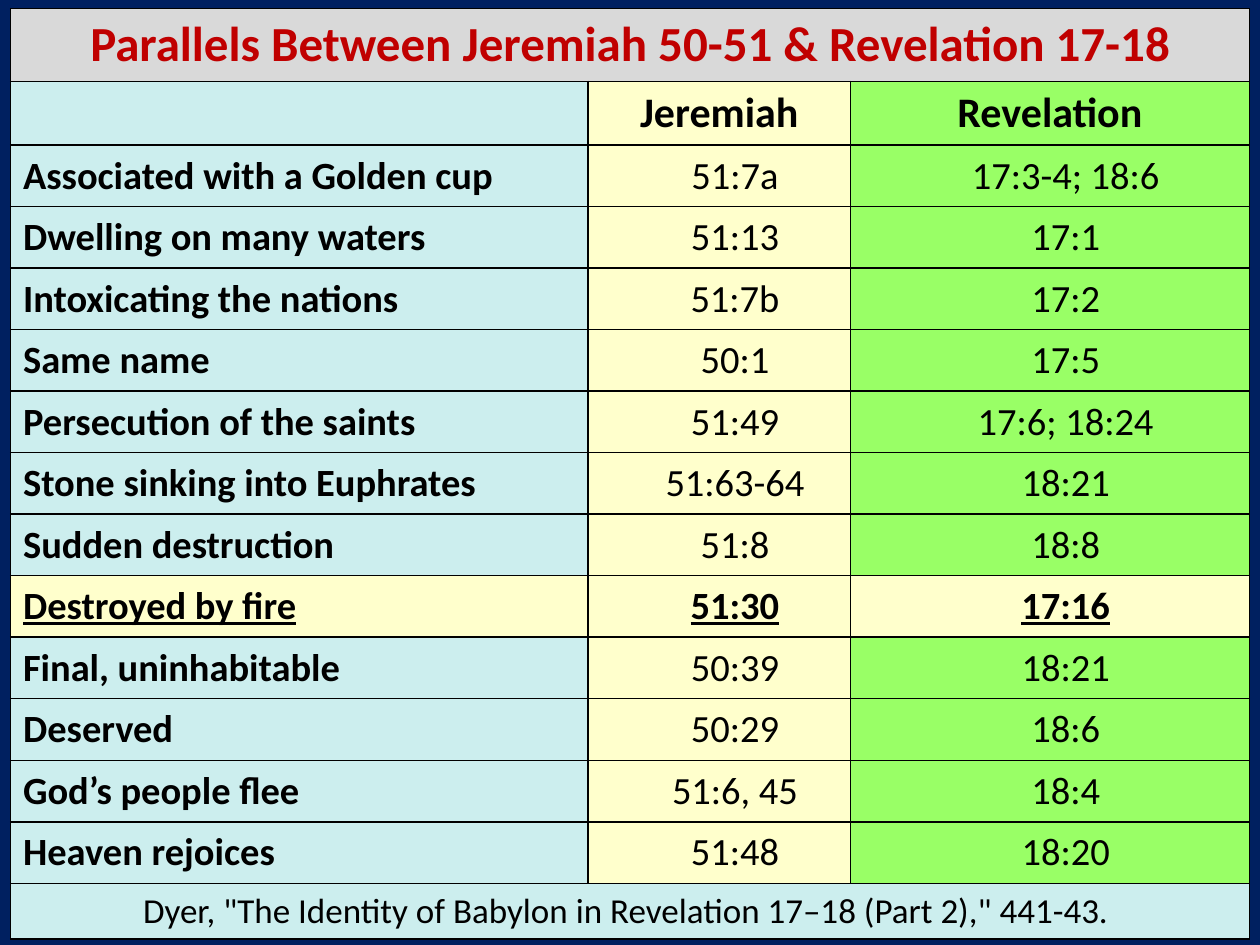
from dataclasses import dataclass
from lxml.etree import SubElement
from pptx import Presentation
from pptx.dml.color import RGBColor
from pptx.enum.text import MSO_ANCHOR as Anchor, PP_ALIGN as Align
from pptx.oxml.ns import qn
from pptx.table import Table, _Cell as Cell
from pptx.util import Pt

BLUE, CREAM, GREEN = "CCEEEE", "FFFFCC", "99FF66"
BLACK = "000000"


@dataclass
class Style:
    size: int
    fill: str
    color: str = BLACK
    bold: bool = False
    underline: bool = False
    align: Align = Align.CENTER
    indent: int = 0


@dataclass
class Parallel:
    theme: str
    jeremiah: str
    revelation: str
    emphasized: bool = False


PARALLELS = [
    Parallel("Associated with a Golden cup", "51:7a", "17:3-4; 18:6"),
    Parallel("Dwelling on many waters", "51:13", "17:1"),
    Parallel("Intoxicating the nations", "51:7b", "17:2"),
    Parallel("Same name", "50:1", "17:5"),
    Parallel("Persecution of the saints", "51:49", "17:6; 18:24"),
    Parallel("Stone sinking into Euphrates", "51:63-64", "18:21"),
    Parallel("Sudden destruction", "51:8", "18:8"),
    Parallel("Destroyed by fire", "51:30", "17:16", emphasized=True),
    Parallel("Final, uninhabitable", "50:39", "18:21"),
    Parallel("Deserved", "50:29", "18:6"),
    Parallel("God’s people flee", "51:6, 45", "18:4"),
    Parallel("Heaven rejoices", "51:48", "18:20"),
]


def rgb(color: str) -> RGBColor:
    return RGBColor.from_string(color)


def draw_borders(cell: Cell) -> None:
    properties = cell._tc.get_or_add_tcPr()
    for position, side in enumerate(("lnL", "lnR", "lnT", "lnB")):
        line = properties.makeelement(qn(f"a:{side}"), {"w": str(Pt(1))})
        fill = SubElement(line, qn("a:solidFill"))
        SubElement(fill, qn("a:srgbClr"), val=BLACK)
        properties.insert(position, line)


def fill_cell(cell: Cell, text: str, style: Style) -> None:
    cell.fill.solid()
    cell.fill.fore_color.rgb = rgb(style.fill)
    cell.vertical_anchor = Anchor.MIDDLE
    cell.text = text
    para = cell.text_frame.paragraphs[0]
    para.alignment = style.align
    if style.indent:
        para._p.get_or_add_pPr().set("marL", str(Pt(style.indent)))
    font = para.font
    font.name = "Calibri"
    font.size = Pt(style.size)
    font.bold = style.bold
    font.underline = style.underline
    font.color.rgb = rgb(style.color)


def draw_banner(table: Table, row: int, text: str, style: Style) -> None:
    table.cell(row, 0).merge(table.cell(row, 2))
    fill_cell(table.cell(row, 0), text, style)


def draw_parallel(table: Table, row: int, parallel: Parallel) -> None:
    strong = parallel.emphasized
    theme_fill, revelation_fill = (CREAM, CREAM) if strong else (BLUE, GREEN)
    fill_cell(table.cell(row, 0), parallel.theme,
              Style(22, theme_fill, bold=True, underline=strong, align=Align.LEFT))
    verses = ((parallel.jeremiah, CREAM), (parallel.revelation, revelation_fill))
    for column, (verse, fill) in enumerate(verses, start=1):
        fill_cell(table.cell(row, column), verse,
                  Style(22, fill, bold=strong, underline=strong, indent=18))


def main() -> None:
    deck = Presentation()
    deck.slide_width, deck.slide_height = Pt(720), Pt(540)
    page = deck.slides.add_slide(deck.slide_layouts[6])
    page.background.fill.solid()
    page.background.fill.fore_color.rgb = rgb("002060")

    widths = [330, 150, 228]
    heights = [41.4, 36.5] + [35.17] * len(PARALLELS) + [31.6]
    frame = page.shapes.add_table(len(heights), len(widths), Pt(6), Pt(5),
                                  Pt(sum(widths)), Pt(sum(heights)))
    table = frame.table
    table.first_row = table.horz_banding = False
    for column, width in zip(table.columns, widths):
        column.width = Pt(width)
    for row, height in zip(table.rows, heights):
        row.height = Pt(height)

    draw_banner(table, 0, "Parallels Between Jeremiah 50-51 & Revelation 17-18",
                Style(28, "D9D9D9", "C00000", bold=True))
    headings = (("", BLUE), ("Jeremiah", CREAM), ("Revelation", GREEN))
    for column, (heading, fill) in enumerate(headings):
        fill_cell(table.cell(1, column), heading, Style(24, fill, bold=True))
    for row, parallel in enumerate(PARALLELS, start=2):
        draw_parallel(table, row, parallel)
    draw_banner(table, len(heights) - 1,
                'Dyer, "The Identity of Babylon in Revelation 17–18 (Part 2)," 441-43. ',
                Style(20, BLUE))
    for cell in table.iter_cells():
        draw_borders(cell)

    deck.save("out.pptx")


if __name__ == "__main__":
    main()
